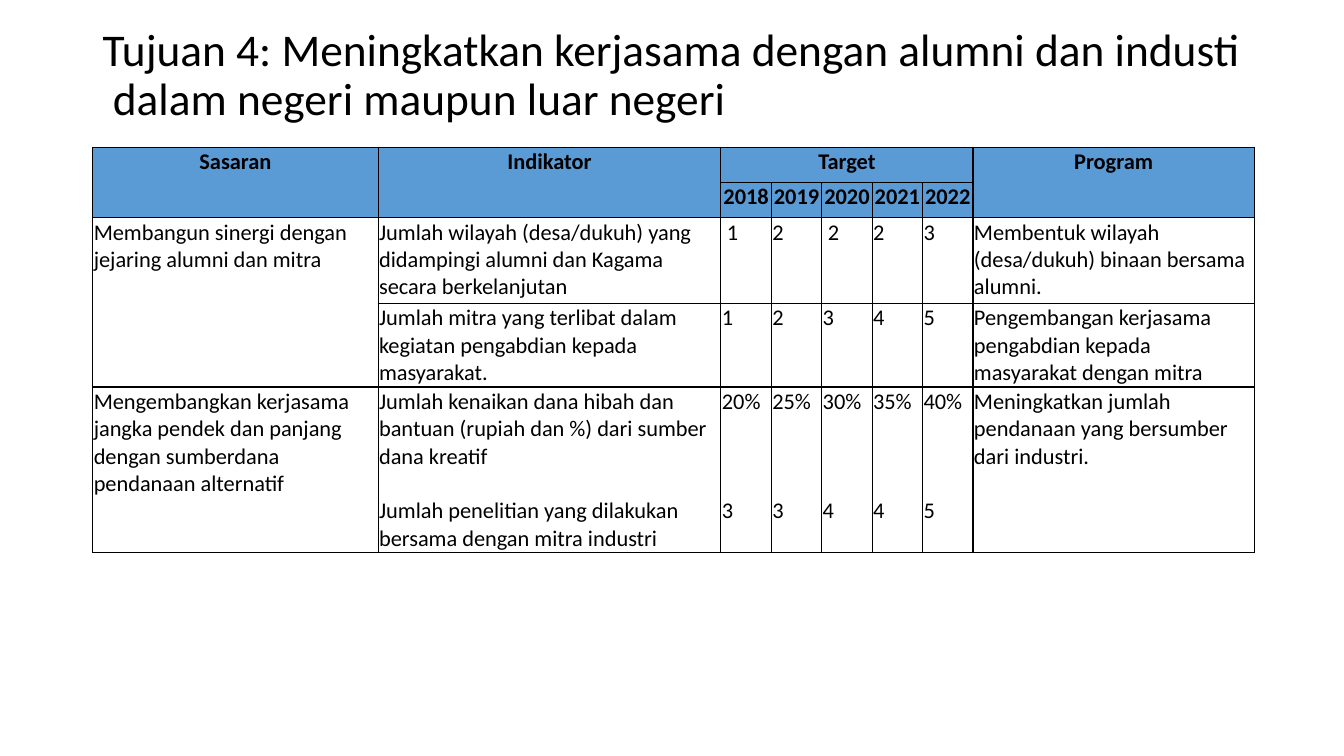
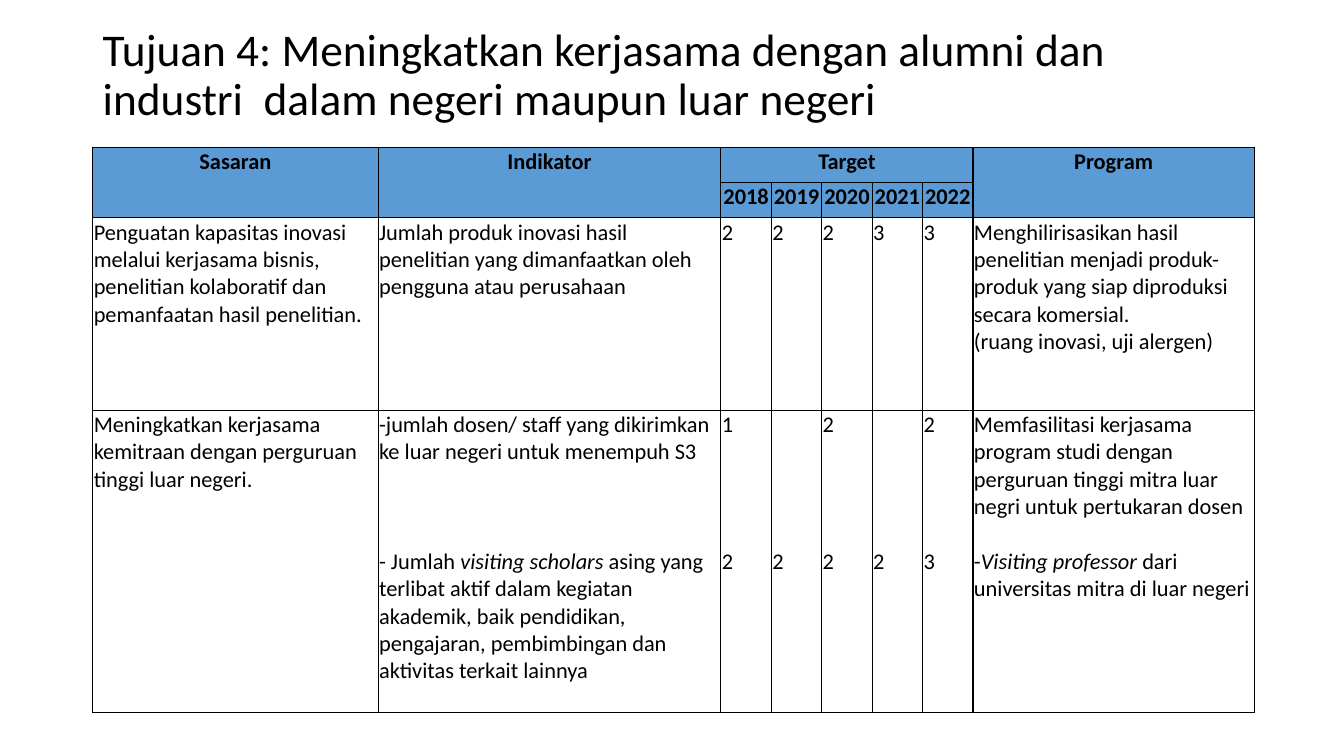
from lxml import etree
from pptx import Presentation
from pptx.dml.color import RGBColor
from pptx.enum.text import MSO_ANCHOR, PP_ALIGN
from pptx.oxml.ns import qn
from pptx.util import Inches, Pt

CENTER, LEFT = PP_ALIGN.CENTER, PP_ALIGN.LEFT
MIDDLE = MSO_ANCHOR.MIDDLE

COLORS = {"text": "000000", "header": "5B9BD5", "border": "000000"}
FONT = "Calibri"
TITLE_FORMAT = {"name": FONT, "size": Pt(32.4)}
HEADER_FORMAT = {"name": FONT, "size": Pt(16), "bold": True}
BODY_FORMAT = {"name": FONT, "size": Pt(16), "bold": False}
LINE_POINTS = 19.53  # height of one line of 16 pt text

TITLE_BOX = (0.92, 0.4, 11.5, 0.71)
TABLE_LEFT, TABLE_TOP = 0.92, 1.46
YEARS = ["2018", "2019", "2020", "2021", "2022"]
COLUMN_WIDTHS = [2.83, 3.4] + [0.5] * len(YEARS) + [2.79]
HEADER_HEIGHTS = [0.35, 0.35]
FIRST_YEAR, PROGRAM = 2, 2 + len(YEARS)

# A cell is a list of (blank lines above, text); *text* is italic.
# A None cell continues the cell above it.
SLIDES = [
    {
        "title": "Tujuan 4: Meningkatkan kerjasama dengan alumni dan industi  dalam negeri maupun luar negeri",
        "heights": [0.85, 0.83, 1.64],
        "rows": [
            [
                [(0, "Membangun sinergi dengan jejaring alumni dan mitra")],
                [(0, "Jumlah wilayah (desa/dukuh) yang didampingi alumni dan Kagama secara berkelanjutan")],
                *[[(0, value)] for value in (" 1", "2", " 2", "2", "3 ")],
                [(0, "Membentuk wilayah (desa/dukuh) binaan bersama alumni.")],
            ],
            [
                None,
                [(0, "Jumlah mitra yang terlibat dalam kegiatan pengabdian kepada masyarakat.")],
                *[[(0, value)] for value in "12345"],
                [(0, "Pengembangan kerjasama pengabdian kepada masyarakat dengan mitra")],
            ],
            [
                [(0, "Mengembangkan kerjasama jangka pendek dan panjang dengan sumberdana pendanaan alternatif")],
                [
                    (0, "Jumlah kenaikan dana hibah dan bantuan (rupiah dan %) dari sumber dana kreatif"),
                    (1, "Jumlah penelitian yang dilakukan bersama dengan mitra industri"),
                ],
                *[[(0, share), (3, count)]
                  for share, count in zip(("20%", "25%", "30%", "35%", "40%"), "33445")],
                [(0, "Meningkatkan jumlah pendanaan yang bersumber dari industri.")],
            ],
        ],
    },
    {
        "title": "Tujuan 4: Meningkatkan kerjasama dengan alumni dan industri  dalam negeri maupun luar negeri",
        "heights": [1.91, 3.0],
        "rows": [
            [
                [(0, "Penguatan kapasitas inovasi melalui kerjasama bisnis, penelitian kolaboratif dan pemanfaatan hasil penelitian.")],
                [(0, "Jumlah produk inovasi hasil penelitian yang dimanfaatkan oleh pengguna atau perusahaan")],
                *[[(0, value)] for value in "22233"],
                [
                    (0, "Menghilirisasikan hasil penelitian menjadi produk-produk yang siap diproduksi secara komersial."),
                    (0, "(ruang inovasi, uji alergen)"),
                ],
            ],
            [
                [(0, "Meningkatkan kerjasama kemitraan dengan perguruan tinggi luar negeri.")],
                [
                    (0, "-jumlah dosen/ staff yang dikirimkan ke luar negeri untuk menempuh S3"),
                    (3, "- Jumlah *visiting scholars *asing yang terlibat aktif dalam kegiatan akademik, baik pendidikan, pengajaran, pembimbingan dan aktivitas terkait lainnya"),
                ],
                [(0, "1"), (4, "2")],
                [(5, "2")],
                [(0, "2"), (4, "2")],
                [(5, "2")],
                [(0, "2"), (4, "3")],
                [
                    (0, "Memfasilitasi kerjasama program studi dengan perguruan tinggi mitra luar negri untuk pertukaran dosen"),
                    (1, "-*Visiting professor *dari universitas mitra di luar negeri"),
                ],
            ],
        ],
    },
]


def set_attributes(target, values):
    for name, value in values.items():
        setattr(target, name, value)


def add_run(paragraph, text, font_format, italic=False):
    run = paragraph.add_run()
    run.text = text
    set_attributes(run.font, font_format)
    run.font.italic = italic
    run.font.color.rgb = RGBColor.from_string(COLORS["text"])


def add_title(slide, text, box):
    shape = slide.shapes.add_textbox(*map(Inches, box))
    set_attributes(shape.text_frame, {"word_wrap": True, "vertical_anchor": MIDDLE})
    paragraph = shape.text_frame.paragraphs[0]
    paragraph.line_spacing = 0.9
    add_run(paragraph, text, TITLE_FORMAT)


def style_cell(cell):
    """Thin borders on all sides, narrow margins and no fill."""
    properties = cell._tc.get_or_add_tcPr()
    for side in ("lnL", "lnR", "lnT", "lnB"):
        line = etree.SubElement(properties, qn(f"a:{side}"), w=str(Pt(1)))
        fill = etree.SubElement(line, qn("a:solidFill"))
        etree.SubElement(fill, qn("a:srgbClr"), val=COLORS["border"])
    set_attributes(cell, {
        "margin_left": Inches(0.01), "margin_right": Inches(0.01),
        "margin_top": Inches(0.01), "margin_bottom": 0,
    })
    cell.fill.background()


def fill_cell(cell, content, font_format, alignment):
    frame = cell.text_frame
    for index, (gap, text) in enumerate(content):
        if index == 0:
            paragraph = frame.paragraphs[0]
            cell.margin_top = Inches(0.01) + Pt(gap * LINE_POINTS)
        else:
            paragraph = frame.add_paragraph()
            paragraph.space_before = Pt(gap * LINE_POINTS)
        paragraph.alignment = alignment
        for position, part in enumerate(text.split("*")):
            if part:
                add_run(paragraph, part, font_format, italic=position % 2 == 1)


def fill_header(table):
    for column in (0, 1, PROGRAM):
        table.cell(0, column).merge(table.cell(1, column))
    table.cell(0, FIRST_YEAR).merge(table.cell(0, PROGRAM - 1))
    labels = {(0, 0): "Sasaran", (0, 1): "Indikator",
              (0, FIRST_YEAR): "Target", (0, PROGRAM): "Program"}
    labels.update({(1, FIRST_YEAR + index): year for index, year in enumerate(YEARS)})
    for position, label in labels.items():
        cell = table.cell(*position)
        cell.fill.solid()
        cell.fill.fore_color.rgb = RGBColor.from_string(COLORS["header"])
        fill_cell(cell, [(0, label)], HEADER_FORMAT, CENTER)


def add_target_table(slide, rows, body_heights, left, top):
    heights = HEADER_HEIGHTS + body_heights
    size = (sum(COLUMN_WIDTHS), sum(heights))
    table = slide.shapes.add_table(
        len(heights), len(COLUMN_WIDTHS), *map(Inches, (left, top, *size))).table
    set_attributes(table, {"first_row": False, "horz_banding": False})
    for column, width in zip(table.columns, COLUMN_WIDTHS):
        column.width = Inches(width)
    for row, height in zip(table.rows, heights):
        row.height = Inches(height)
    for cell in table.iter_cells():
        style_cell(cell)

    fill_header(table)

    # Body rows
    for row_index, row in enumerate(rows, start=len(HEADER_HEIGHTS)):
        for column_index, content in enumerate(row):
            cell = table.cell(row_index, column_index)
            if content is None:
                table.cell(row_index - 1, column_index).merge(cell)
            else:
                fill_cell(cell, content, BODY_FORMAT, LEFT)


def main():
    presentation = Presentation()
    set_attributes(presentation, {"slide_width": Inches(13.33), "slide_height": Inches(7.5)})
    blank_layout = presentation.slide_layouts[6]
    for content in SLIDES:
        slide = presentation.slides.add_slide(blank_layout)
        add_title(slide, content["title"], TITLE_BOX)
        add_target_table(slide, content["rows"], content["heights"], TABLE_LEFT, TABLE_TOP)
    presentation.save("out.pptx")


if __name__ == "__main__":
    main()
